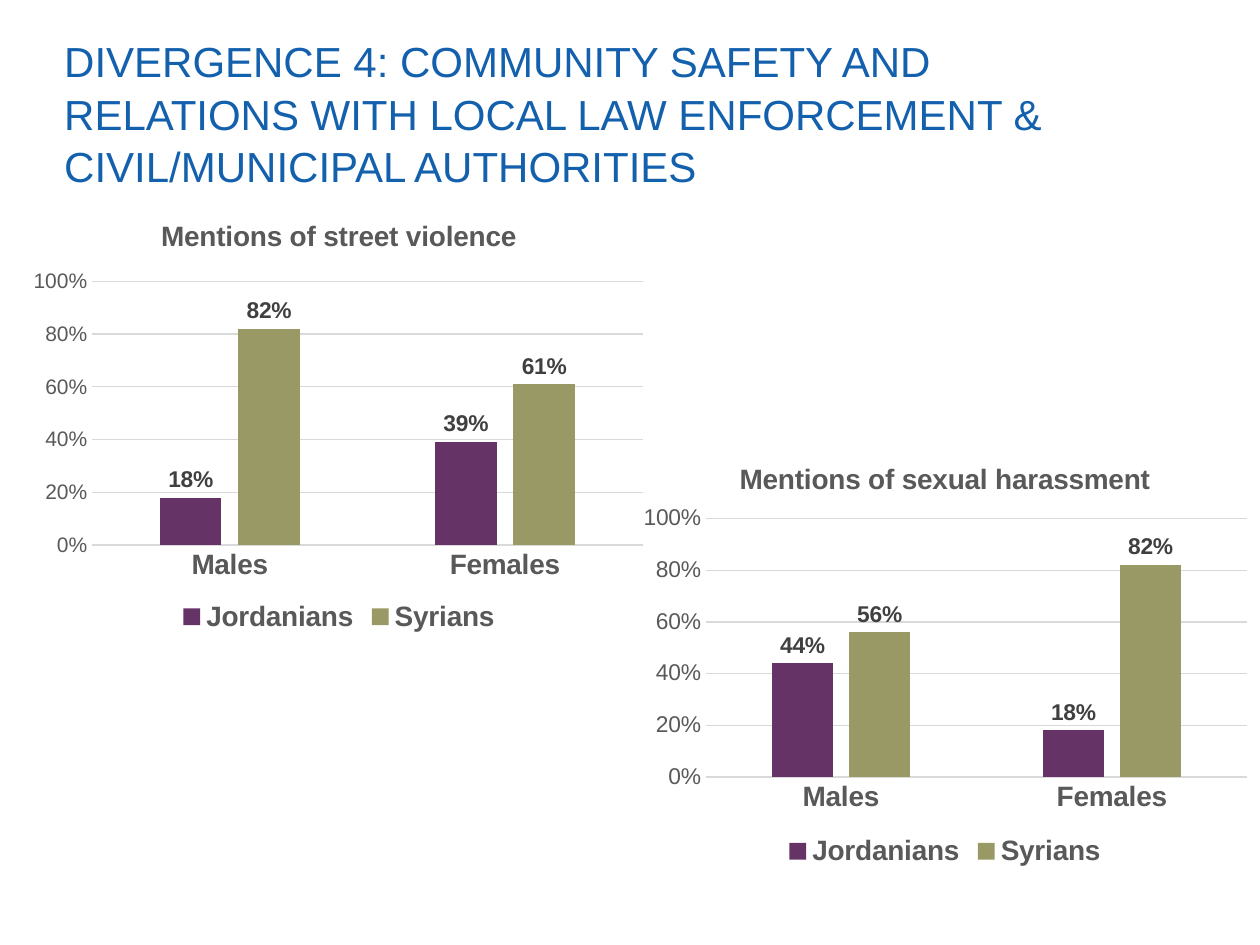
from lxml import etree
from pptx import Presentation
from pptx.chart.data import CategoryChartData
from pptx.dml.color import RGBColor
from pptx.enum import chart as kinds, text
from pptx.oxml import parse_xml
from pptx.oxml.ns import nsdecls
from pptx.util import Inches, Pt

BLUE = RGBColor(0x13, 0x60, 0xAD)
PURPLE = RGBColor(0x66, 0x33, 0x66)
OLIVE = RGBColor(0x99, 0x99, 0x66)
GRAY = RGBColor(0x59, 0x59, 0x59)
DARK = RGBColor(0x40, 0x40, 0x40)
RULE = RGBColor(0xD9, 0xD9, 0xD9)
FONT = "Arial"

TITLE = ("DIVERGENCE 4: COMMUNITY SAFETY AND RELATIONS WITH LOCAL LAW "
         "ENFORCEMENT & CIVIL/MUNICIPAL AUTHORITIES")
CATEGORIES = ["Males", "Females"]
GROUPS = [("Jordanians", PURPLE), ("Syrians", OLIVE)]
CHARTS = [
    {"title": "Mentions of street violence", "values": [(0.18, 0.39), (0.82, 0.61)],
     "frame": (0.18, 1.57, 5.02, 3.49), "axis_size": 12,
     "plot": (0.11, 0.19, 0.87, 0.6)},
    {"title": "Mentions of sexual harassment", "values": [(0.44, 0.18), (0.56, 0.82)],
     "frame": (5, 3.5, 5, 3.42), "axis_size": 13,
     "plot": (0.12, 0.18, 0.86, 0.6)},
]


def style(font, size, color=GRAY, bold=False):
    font.name, font.size, font.bold = FONT, Pt(size), bold
    font.color.rgb = color


def write(frame, words, size, color=GRAY, bold=False, spacing=None):
    frame.text = words
    para = frame.paragraphs[0]
    para.line_spacing = spacing
    style(para.runs[0].font, size, color, bold)


def rule_line(line):
    line.color.rgb = RULE
    line.width = Pt(0.75)


def place_plot(chart, shares):
    area = chart._chartSpace.chart.plotArea
    for old in area.findall("c:layout", area.nsmap):
        area.remove(old)
    layout = parse_xml(f"<c:layout {nsdecls('c')}><c:manualLayout/></c:layout>")
    settings = [("layoutTarget", "inner"), ("xMode", "edge"), ("yMode", "edge")]
    settings += zip("xywh", shares)
    for name, value in settings:
        tag = layout[0].tag.replace("manualLayout", name)
        etree.SubElement(layout[0], tag).set("val", str(value))
    area.insert(0, layout)


def add_columns(page, item):
    data = CategoryChartData(number_format="0%")
    data.categories = CATEGORIES
    for (name, _), values in zip(GROUPS, item["values"]):
        data.add_series(name, values)
    chart = page.shapes.add_chart(kinds.XL_CHART_TYPE.COLUMN_CLUSTERED,
                                  *map(Inches, item["frame"]), data).chart
    chart.font.name, chart.font.size = FONT, Pt(10)
    chart.has_title = True
    write(chart.chart_title.text_frame, item["title"], 16, bold=True)
    chart.chart_title.include_in_layout = False
    chart.has_legend = True
    chart.legend.position = kinds.XL_LEGEND_POSITION.BOTTOM
    chart.legend.include_in_layout = False
    style(chart.legend.font, 16, bold=True)

    across, up = chart.category_axis, chart.value_axis
    for axis in (across, up):
        axis.major_tick_mark = axis.minor_tick_mark = kinds.XL_TICK_MARK.NONE
    style(across.tick_labels.font, 16, bold=True)
    rule_line(across.format.line)
    style(up.tick_labels.font, item["axis_size"])
    up.tick_labels.number_format = "0%"
    up.tick_labels.number_format_is_linked = False
    up.minimum_scale, up.maximum_scale, up.major_unit = 0, 1, 0.2
    up.format.line.fill.background()
    rule_line(up.major_gridlines.format.line)

    plot = chart.plots[0]
    plot.gap_width, plot.overlap, plot.vary_by_categories = 219, -27, False
    for series, (_, color) in zip(plot.series, GROUPS):
        series.format.fill.solid()
        series.format.fill.fore_color.rgb = color
        labels = series.data_labels
        labels.show_value = True
        labels.number_format, labels.number_format_is_linked = "0%", False
        labels.position = kinds.XL_LABEL_POSITION.OUTSIDE_END
        style(labels.font, 13, DARK, True)
    place_plot(chart, item["plot"])


def main():
    deck = Presentation()
    deck.slide_width, deck.slide_height = Inches(10), Inches(7.5)
    page = deck.slides.add_slide(deck.slide_layouts[5])
    box = page.shapes.title
    box.left, box.top, box.width, box.height = map(Inches, (0.41, 0.21, 7.97, 1.18))
    frame = box.text_frame
    frame.word_wrap = True
    frame.auto_size = text.MSO_AUTO_SIZE.NONE
    frame.vertical_anchor = text.MSO_ANCHOR.TOP
    write(frame, TITLE, 24, BLUE, spacing=1.05)
    frame.paragraphs[0].alignment = text.PP_ALIGN.LEFT
    for item in CHARTS:
        add_columns(page, item)
    deck.save("out.pptx")


if __name__ == "__main__":
    main()
